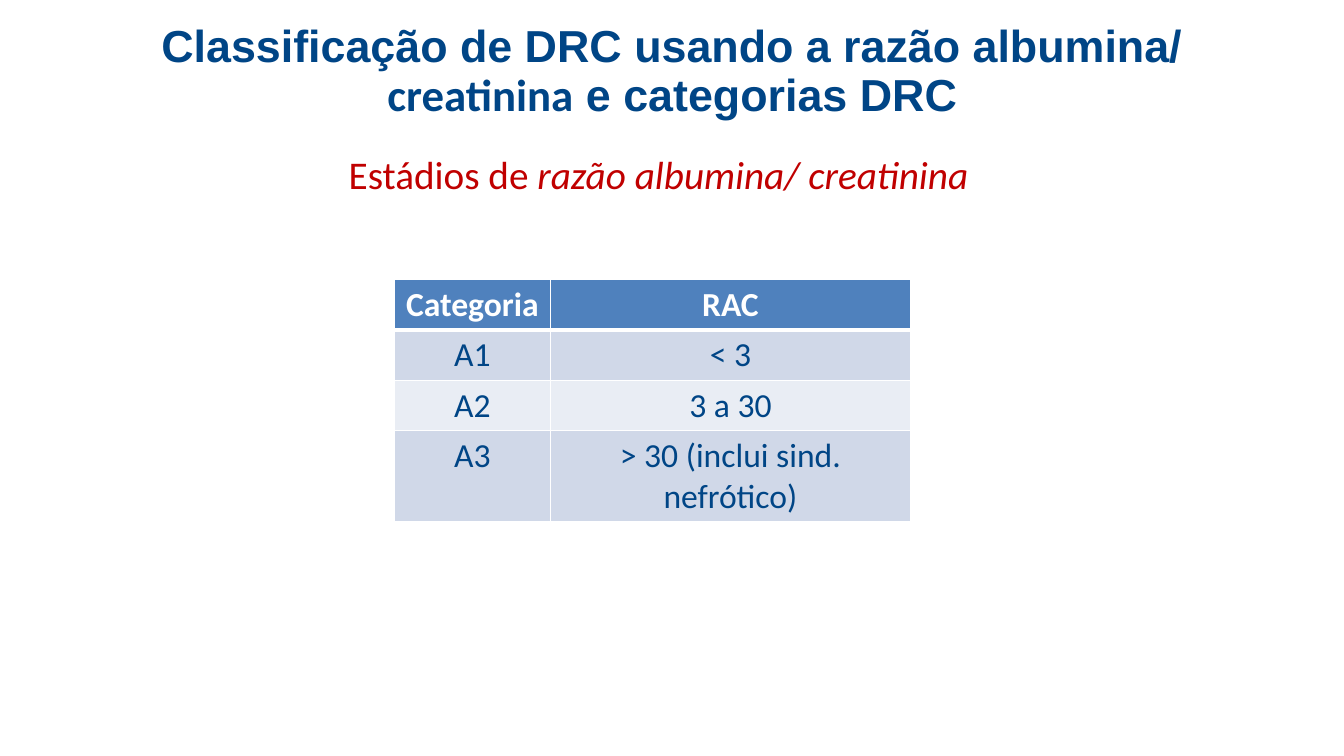
from dataclasses import dataclass

from lxml import etree
from pptx import Presentation
from pptx import util as u
from pptx.dml.color import RGBColor
from pptx.enum import text
from pptx.oxml import ns

NAVY, RED, WHITE = "004586", "C00000", "FFFFFF"
HEADER, BANDS = "4F81BD", ("D0D8E8", "E9EDF4")


@dataclass
class Run:
    """One run of text and its look."""
    text: str
    size: float
    color: str
    font: str = "Calibri"
    bold: bool = False
    italic: bool = False


def rgb(value: str) -> RGBColor:
    """Return the colour for a hex string."""
    return RGBColor.from_string(value)


def place(sp, left: float, top: float, width: float, height: float) -> None:
    """Position a shape in inches."""
    sp.left, sp.top = u.Inches(left), u.Inches(top)
    sp.width, sp.height = u.Inches(width), u.Inches(height)


def write(tf, runs: list[Run], align, spacing: float = 1.0) -> None:
    """Fill the first paragraph of a text frame run by run."""
    tf.word_wrap = True
    p = tf.paragraphs[0]
    p.alignment, p.line_spacing = align, spacing
    p.space_before = u.Pt(0)
    for item in runs:
        r = p.add_run()
        r.text = item.text
        f = r.font
        f.name, f.size = item.font, u.Pt(item.size)
        f.bold, f.italic = item.bold, item.italic
        f.color.rgb = rgb(item.color)


def style_cell(cell, fill: str, bottom: float) -> None:
    """Give a cell white borders and a solid fill."""
    tc_pr = cell._tc.get_or_add_tcPr()
    for side, width in (("L", 1), ("R", 1), ("T", 1), ("B", bottom)):
        ln = etree.SubElement(tc_pr, ns.qn(f"a:ln{side}"), w=str(u.Pt(width)))
        solid = etree.SubElement(ln, ns.qn("a:solidFill"))
        etree.SubElement(solid, ns.qn("a:srgbClr"), val=WHITE)
    cell.fill.solid()
    cell.fill.fore_color.rgb = rgb(fill)


def add_categories(s, rows: list[tuple[str, str]]) -> None:
    """Draw the table of albuminuria categories."""
    frame = s.shapes.add_table(len(rows), 2, u.Inches(3.91), u.Inches(2.77),
                               u.Inches(5.12), u.Inches(0.41 * len(rows)))
    table = frame.table
    for column, width in zip(table.columns, (1.55, 3.57)):
        column.width = u.Inches(width)
    for i, row in enumerate(rows):
        table.rows[i].height = u.Inches(0.41)
        head = i == 0
        for j, value in enumerate(row):
            cell = table.cell(i, j)
            run = Run(value, 24, WHITE if head else NAVY, bold=head)
            write(cell.text_frame, [run], text.PP_ALIGN.CENTER)
            style_cell(cell, HEADER if head else BANDS[(i - 1) % 2], 3 if head else 1)


def main() -> None:
    """Build and save the slide."""
    prs = Presentation()
    prs.slide_width, prs.slide_height = u.Inches(13.33), u.Inches(7.5)
    s = prs.slides.add_slide(prs.slide_layouts[5])
    s.background.fill.solid()
    s.background.fill.fore_color.rgb = rgb(WHITE)

    title = s.shapes.title
    place(title, 0.67, 0.39, 12, 0.66)
    tf = title.text_frame
    tf.auto_size = text.MSO_AUTO_SIZE.NONE
    tf.vertical_anchor = text.MSO_ANCHOR.MIDDLE
    write(tf, [
        Run("Classificação de DRC usando a razão albumina/ ", 32, NAVY, "Arial", True),
        Run("creatinina", 32, NAVY, bold=True),
        Run(" e categorias DRC", 32, NAVY, "Arial", True),
    ], text.PP_ALIGN.CENTER, 0.9)

    subtitle = s.shapes.add_textbox(0, 0, 0, 0)
    place(subtitle, 2.72, 1.49, 6.98, 0.46)
    write(subtitle.text_frame, [
        Run("Estádios de ", 28, RED),
        Run("razão albumina/ creatinina", 28, RED, italic=True),
    ], text.PP_ALIGN.RIGHT, 0.9)

    add_categories(s, [
        ("Categoria", "RAC"),
        ("A1", "< 3"),
        ("A2", "3 a 30"),
        ("A3", "> 30 (inclui sind. nefrótico)"),
    ])
    prs.save("out.pptx")


if __name__ == "__main__":
    main()
